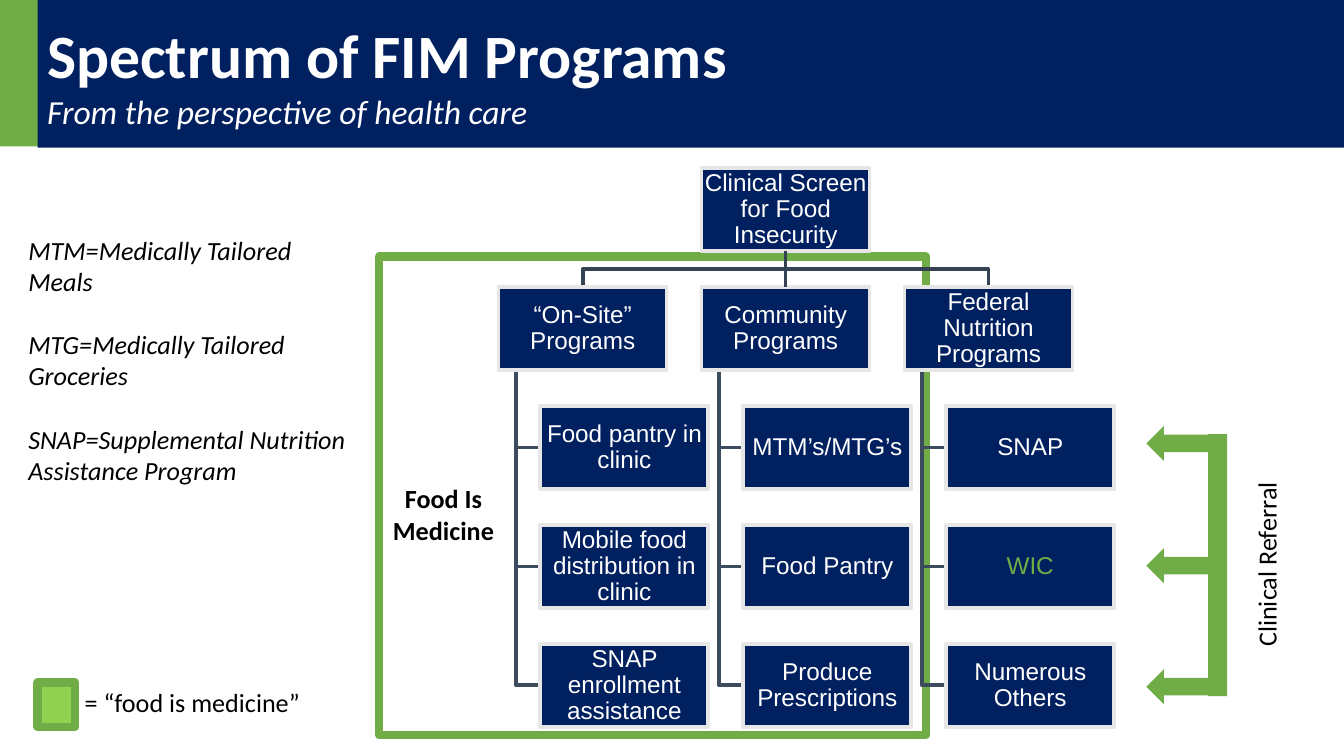
from dataclasses import dataclass
from typing import NamedTuple

from lxml import etree
from pptx import Presentation
from pptx.dml.color import RGBColor as Rgb
from pptx.enum.shapes import MSO_CONNECTOR as Link, MSO_SHAPE as Kind
from pptx.enum.text import MSO_ANCHOR as Anchor, PP_ALIGN as Align
from pptx.oxml.ns import qn
from pptx.util import Inches, Pt

HUES = {
    "navy": "002060", "green": "70AD47", "lime": "92D050", "white": "FFFFFF",
    "black": "000000", "edge": "E7E6E6", "limb": "3D4B5F", "top": "354254",
}


class Box(NamedTuple):
    x: float
    y: float
    w: float
    h: float


@dataclass
class Style:
    size: float = 14
    hue: str = "black"
    bold: bool = False
    ital: bool = False
    font: str = "Calibri"
    align: Align = Align.LEFT
    gap: float = 0
    lead: float = 1.0


@dataclass
class Branch:
    head: str
    items: tuple[str, ...]


# Chart grid
WIDE, HIGH = 1.25, 0.62
LEFT, TOP = 3.71, 1.25
COL = 1.51
ROW = (4.79 - TOP) / 4
INDENT = 0.31
STEM = 0.13

BRANCHES = [
    Branch("“On-Site” Programs", (
        "Food pantry in clinic", "Mobile food distribution in clinic",
        "SNAP enrollment assistance")),
    Branch("Community Programs", (
        "MTM’s/MTG’s", "Food Pantry", "Produce Prescriptions")),
    Branch("Federal Nutrition Programs", ("SNAP", "WIC", "Numerous Others")),
]
TERMS = [
    "MTM=Medically Tailored Meals",
    "MTG=Medically Tailored Groceries",
    "SNAP=Supplemental Nutrition Assistance Program",
]

# Widescreen page, 16 to 9
deck = Presentation()
deck.slide_width = Inches(10)
deck.slide_height = Inches(10 * 9 / 16)
slide = deck.slides.add_slide(deck.slide_layouts[6])
shapes = slide.shapes


def color(name: str) -> Rgb:
    return Rgb.from_string(HUES[name])


def add_rect(box: Box, fill: str, edge: str = "", width: float = 0,
             kind: Kind = Kind.RECTANGLE):
    shape = shapes.add_shape(kind, *map(Inches, box))
    shape.shadow.inherit = False
    shape.fill.solid()
    shape.fill.fore_color.rgb = color(fill)
    if edge:
        shape.line.color.rgb = color(edge)
        shape.line.width = Pt(width)
    else:
        shape.line.fill.background()
    return shape


def write(shape, lines: list[tuple[str, Style]], anchor: Anchor = Anchor.TOP,
          pad: tuple[float, float] = (0.07, 0.04)) -> None:
    frame = shape.text_frame
    frame.word_wrap = True
    frame.vertical_anchor = anchor
    frame.margin_left = frame.margin_right = Inches(pad[0])
    frame.margin_top = frame.margin_bottom = Inches(pad[1])
    for i, (text, style) in enumerate(lines):
        para = frame.add_paragraph() if i else frame.paragraphs[0]
        para.alignment = style.align
        para.line_spacing = style.lead
        para.space_before = Pt(style.gap if i else 0)
        run = para.add_run()
        run.text = text
        font = run.font
        font.name, font.size = style.font, Pt(style.size)
        font.bold, font.italic = style.bold, style.ital
        font.color.rgb = color(style.hue)


def add_text(box: Box, lines: list[tuple[str, Style]]):
    shape = shapes.add_textbox(*map(Inches, box))
    write(shape, lines)
    return shape


def add_node(x: float, y: float, text: str):
    shape = add_rect(Box(x, y, WIDE, HIGH), "navy", "edge", 2)
    hue = "green" if text == "WIC" else "white"
    style = Style(13, hue, font="Arial", align=Align.CENTER, lead=0.9)
    write(shape, [(text, style)], Anchor.MIDDLE, (0.01, 0.01))
    return shape


def add_elbow(points: list[tuple[float, float]], hue: str) -> None:
    spots = [(Inches(x), Inches(y)) for x, y in points]
    maker = shapes.build_freeform(*spots[0], scale=1.0)
    maker.add_line_segments(spots[1:], close=False)
    shape = maker.convert_to_shape()
    shape.shadow.inherit = False
    shape.fill.background()
    shape.line.color.rgb = color(hue)
    shape.line.width = Pt(2)


def add_link(start, end, hue: str) -> None:
    line = shapes.add_connector(Link.STRAIGHT, 0, 0, 0, 0)
    line.begin_connect(start, 2)
    line.end_connect(end, 0)
    line.line.color.rgb = color(hue)
    line.line.width = Pt(2)
    etree.SubElement(line._element.spPr, qn("a:effectLst"))


# Green frame
add_rect(Box(2.82, 1.91, 4.07, 3.56), "white", "green", 4.5)

# Elbow lines, behind the boxes
mid = LEFT + COL + WIDE / 2
base, head_y = TOP + HIGH, TOP + ROW
for i, branch in enumerate(BRANCHES):
    x = LEFT + i * COL
    for j in range(len(branch.items)):
        y = TOP + (j + 2) * ROW + HIGH / 2
        add_elbow([(x + STEM, head_y + HIGH), (x + STEM, y),
                   (x + INDENT, y)], "limb")
    if i != 1:
        bend, end = (base + head_y) / 2, x + WIDE / 2
        add_elbow([(mid, base), (mid, bend), (end, bend), (end, head_y)],
                  "top")

# Chart boxes
root = add_node(LEFT + COL, TOP, "Clinical Screen for Food Insecurity")
heads = []
for i, branch in enumerate(BRANCHES):
    x = LEFT + i * COL
    heads.append(add_node(x, head_y, branch.head))
    for j, item in enumerate(branch.items):
        add_node(x + INDENT, TOP + (j + 2) * ROW, item)
add_link(root, heads[1], "top")

add_text(Box(2.82, 3.55, 0.96, 0.55),
         [("Food Is Medicine", Style(bold=True, align=Align.CENTER))])

# Referral bracket
for y in (3.17, 4.08, 4.98):
    add_rect(Box(8.53, y, 0.47, 0.26), "green", kind=Kind.LEFT_ARROW)
add_rect(Box(8.99, 3.23, 0.14, 1.95), "green")
label = add_text(Box(8.44, 4.05, 1.95, 0.3),
                 [("Clinical Referral", Style(align=Align.CENTER))])
label.rotation = 270

# Key and terms
add_rect(Box(0.28, 5.08, 0.28, 0.33), "lime", "green", 4.5)
add_text(Box(0.56, 5.07, 2.63, 0.3), [("= “food is medicine”", Style())])
add_text(Box(0.14, 1.7, 2.55, 2.12),
         [(term, Style(ital=True, gap=17)) for term in TERMS])

# Title band
add_rect(Box(0, 0, 0.57, 1.09), "green")
band = add_rect(Box(0.28, 0, 9.72, 1.1), "navy")
write(band, [
    ("Spectrum of FIM Programs", Style(33, "white", bold=True)),
    ("From the perspective of health care", Style(18, "white", ital=True)),
], Anchor.MIDDLE)

deck.save("out.pptx")
